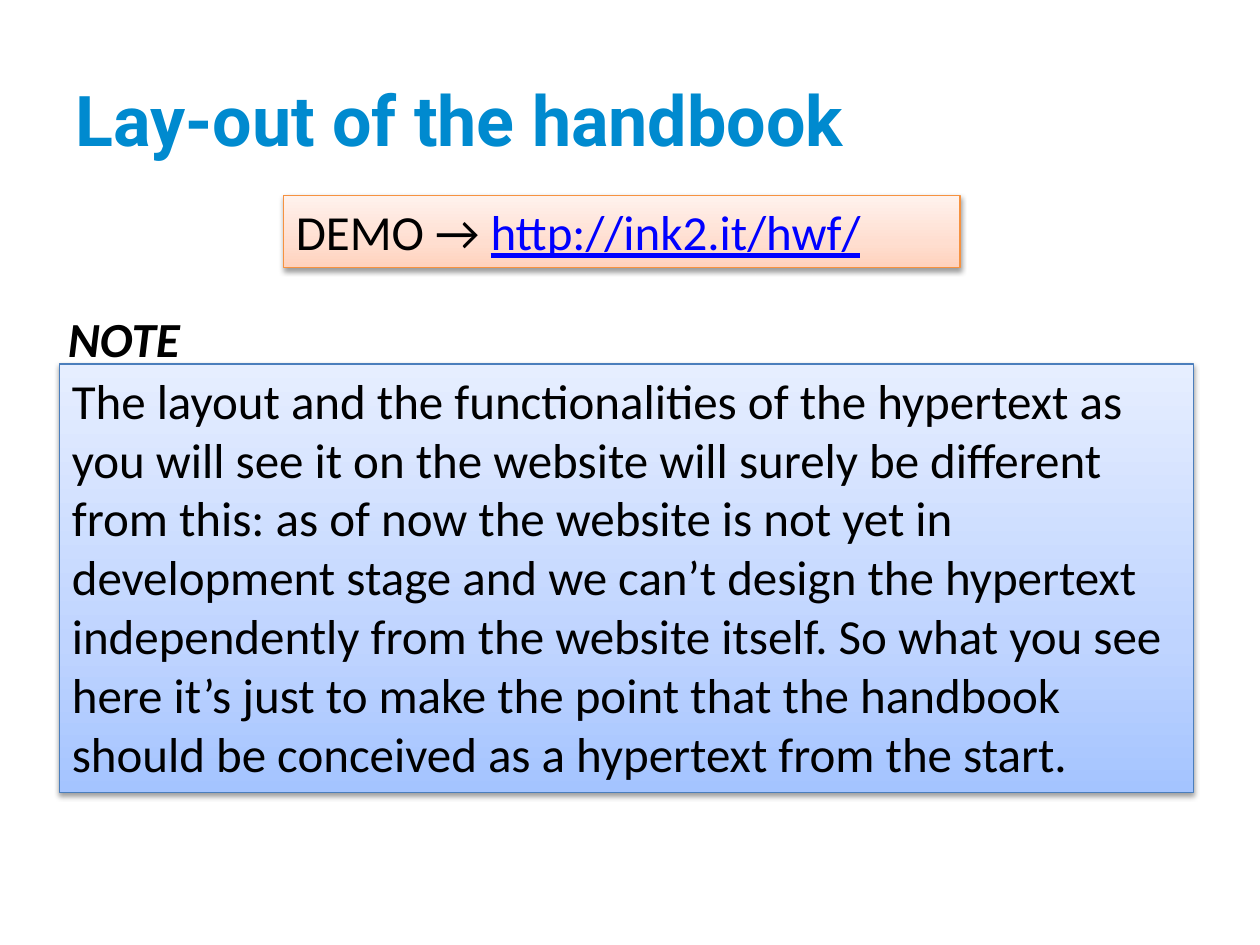
import copy

import lxml.etree
import pptx
import pptx.dml.color
import pptx.enum.shapes
import pptx.enum.text
import pptx.oxml.ns
import pptx.util

Pt = pptx.util.Pt
qn = pptx.oxml.ns.qn


def color(value):
    return pptx.dml.color.RGBColor.from_string(value)


def add_run(paragraph, text, size=28, font="Calibri", fill="000000", bold=False, italic=False, underline=False):
    run = paragraph.add_run()
    run.text = text
    run.font.size = Pt(size)
    run.font.name = font
    run.font.color.rgb = color(fill)
    run.font.bold = bold
    run.font.italic = italic
    run.font.underline = underline


def fill_gradient(shape, colors):
    shape.fill.gradient()
    shape.fill.gradient_angle = 90
    stop_list = next(shape._element.spPr.iter(qn("a:gsLst")))
    stop_list.insert(1, copy.deepcopy(stop_list[0]))
    for stop, position, value in zip(shape.fill.gradient_stops, (0, 0.35, 1), colors):
        stop.position = position
        stop.color.rgb = color(value)


def add_shadow(shape):
    shape.shadow.inherit = False
    effects = shape._element.spPr.find(qn("a:effectLst"))
    shadow = lxml.etree.SubElement(
        effects, qn("a:outerShdw"), blurRad="40000", dist="20000", dir="5400000", rotWithShape="0"
    )
    shadow_color = lxml.etree.SubElement(shadow, qn("a:srgbClr"), val="000000")
    lxml.etree.SubElement(shadow_color, qn("a:alpha"), val="38000")


def add_text(slide, box, text, wrap=True, **style):
    shape = slide.shapes.add_textbox(*map(Pt, box))
    frame = shape.text_frame
    frame.word_wrap = wrap
    add_run(frame.paragraphs[0], text, **style)


def add_panel(slide, box, colors, outline, runs):
    shape = slide.shapes.add_shape(pptx.enum.shapes.MSO_SHAPE.RECTANGLE, *map(Pt, box))
    fill_gradient(shape, colors)
    shape.line.color.rgb = color(outline)
    shape.line.width = Pt(0.75)
    add_shadow(shape)
    frame = shape.text_frame
    frame.word_wrap = True
    frame.vertical_anchor = pptx.enum.text.MSO_ANCHOR.TOP
    paragraph = frame.paragraphs[0]
    paragraph.alignment = pptx.enum.text.PP_ALIGN.LEFT
    for text, style in runs:
        add_run(paragraph, text, **style)


def main():
    presentation = pptx.Presentation()
    presentation.slide_width = Pt(720)
    presentation.slide_height = Pt(540)
    slide = presentation.slides.add_slide(presentation.slide_layouts[6])

    add_text(slide, (36, 40.3, 648, 90), "Lay-out of the handbook",
             size=40, font="Roboto", fill="008ACF", bold=True)
    note = (
        "The layout and the functionalities of the hypertext as you will see it on the website "
        "will surely be different from this: as of now the website is not yet in development stage "
        "and we can’t design the hypertext independently from the website itself. So what you see "
        "here it’s just to make the point that the handbook should be conceived as a hypertext "
        "from the start."
    )
    add_panel(slide, (34, 208, 648, 245), ("A4C4FF", "BFD4FF", "E6EEFF"), "4B7EBC", [(note, {})])
    add_panel(slide, (162, 111.6, 386.6, 41.2), ("FFD2BD", "FFDED0", "FFF2ED"), "F69240",
              [("DEMO → ", {}), ("http://ink2.it/hwf/", {"fill": "0000FF", "underline": True})])
    add_text(slide, (31.7, 172.8, 79.2, 41.2), "NOTE", wrap=False, bold=True, italic=True)

    presentation.save("out.pptx")


if __name__ == "__main__":
    main()
